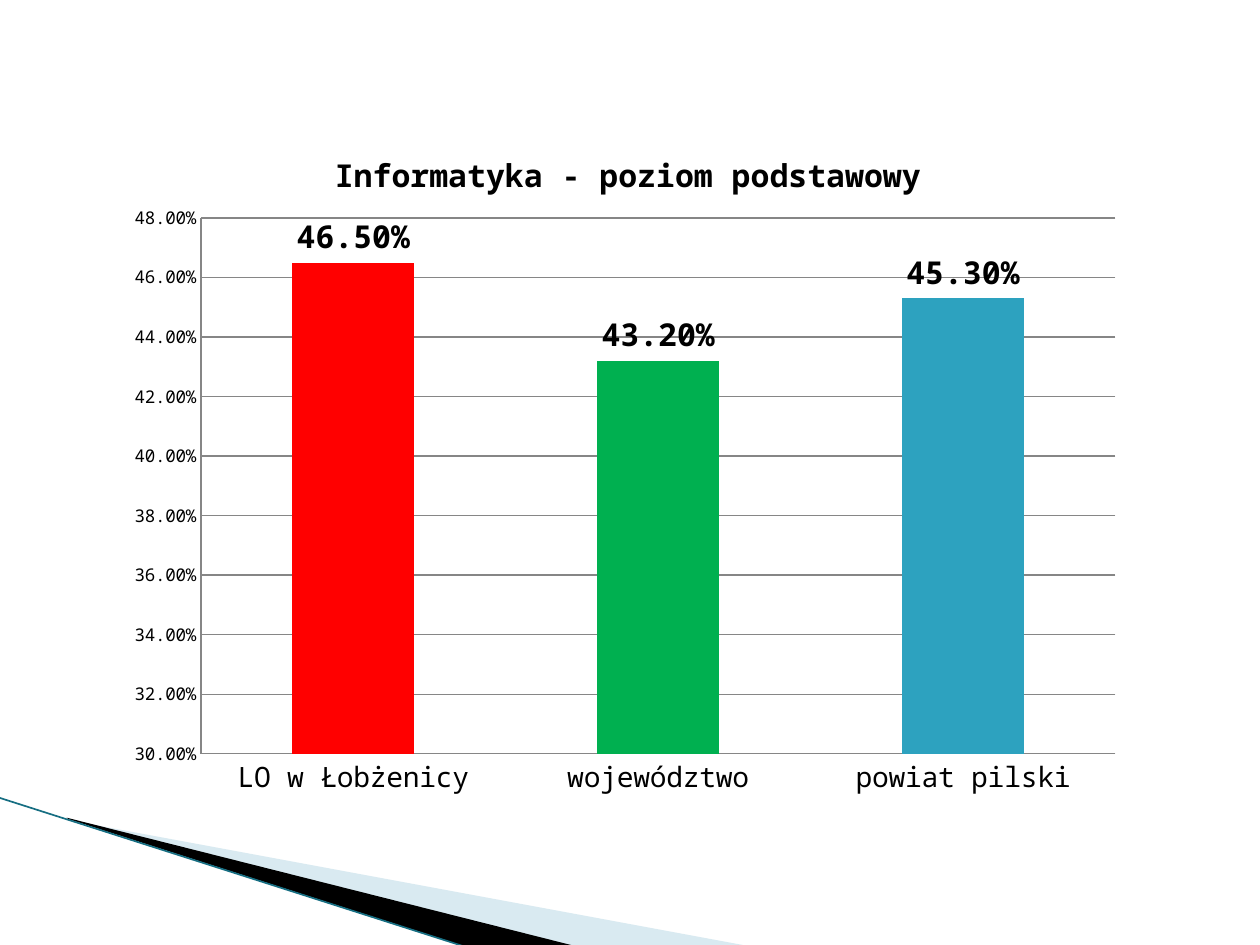
from dataclasses import dataclass

from lxml.etree import SubElement
from pptx import Presentation
from pptx.chart.data import CategoryChartData
from pptx.dml.color import RGBColor
from pptx.enum.chart import XL_CHART_TYPE, XL_LABEL_POSITION, XL_TICK_MARK
from pptx.enum.shapes import MSO_CONNECTOR
from pptx.oxml.ns import qn
from pptx.util import Inches, Pt


@dataclass(frozen=True)
class Theme:
    font: str = "Noto Sans Mono"
    text: RGBColor = RGBColor(0, 0, 0)
    grid: RGBColor = RGBColor(0x86, 0x86, 0x86)
    school: RGBColor = RGBColor(0xFF, 0, 0)
    province: RGBColor = RGBColor(0, 0xB0, 0x50)
    county: RGBColor = RGBColor(0x2D, 0xA2, 0xBF)
    pale_wedge: RGBColor = RGBColor(0xA0, 0xCB, 0xDC)
    edge: RGBColor = RGBColor(0x16, 0x6E, 0x82)
    base_size: Pt = Pt(10)
    category_size: Pt = Pt(16)
    heading_size: Pt = Pt(18)


THEME = Theme()
PERCENT = "0.00%"
RESULTS = [
    ("LO w Łobżenicy", 0.465, THEME.school),
    ("województwo", 0.432, THEME.province),
    ("powiat pilski", 0.453, THEME.county),
]


def add_wedge(slide, points, color, opacity=100):
    corners = [(Inches(x), Inches(y)) for x, y in points]
    builder = slide.shapes.build_freeform(*corners[0])
    builder.add_line_segments(corners[1:], close=True)
    shape = builder.convert_to_shape()
    shape.shadow.inherit = False
    shape.fill.solid()
    shape.fill.fore_color.rgb = color
    shape.line.fill.background()
    if opacity < 100:
        color_element = shape.fill._xPr.find(".//" + qn("a:srgbClr"))
        SubElement(color_element, qn("a:alpha"), val=str(opacity * 1000))


def add_edge(slide, start, end):
    connector = slide.shapes.add_connector(
        MSO_CONNECTOR.STRAIGHT, *map(Inches, start + end))
    connector.line.color.rgb = THEME.edge
    connector.line.width = Pt(0.95)
    SubElement(connector._element.spPr, qn("a:effectLst"))


def set_font(font, size, bold=False):
    font.name = THEME.font
    font.size = size
    font.bold = bold
    font.color.rgb = THEME.text


def set_layout(element, inner=False, **fractions):
    """Place a chart part by fractions of the chart area."""
    layout = element.find(qn("c:layout"))
    if layout is None:
        layout = element.makeelement(qn("c:layout"))
        element.insert(0, layout)
    manual = SubElement(layout, qn("c:manualLayout"))
    if inner:
        SubElement(manual, qn("c:layoutTarget"), val="inner")
    for side in "xy":
        SubElement(manual, qn(f"c:{side}Mode"), val="edge")
    for side, fraction in fractions.items():
        SubElement(manual, qn(f"c:{side}"), val=str(fraction))


def style_axis(axis, size):
    axis.major_tick_mark = XL_TICK_MARK.NONE
    axis.minor_tick_mark = XL_TICK_MARK.NONE
    axis.format.line.color.rgb = THEME.grid
    set_font(axis.tick_labels.font, size)


def add_results_chart(slide):
    data = CategoryChartData(number_format=PERCENT)
    data.categories = [name for name, _, _ in RESULTS]
    data.add_series("Series 1", [value for _, value, _ in RESULTS])
    chart = slide.shapes.add_chart(
        XL_CHART_TYPE.COLUMN_CLUSTERED,
        Inches(0.91), Inches(0.92), Inches(8.11), Inches(5.51), data).chart
    set_font(chart.font, THEME.base_size)
    chart.has_legend = False

    # Title
    title_frame = chart.chart_title.text_frame
    title_frame.text = "Informatyka - poziom podstawowy"
    set_font(title_frame.paragraphs[0].runs[0].font, THEME.heading_size, True)
    set_layout(chart.chart_title._element, x=0.21, y=0.04)

    # Axes and plot area
    style_axis(chart.category_axis, THEME.category_size)
    value_axis = chart.value_axis
    style_axis(value_axis, THEME.base_size)
    value_axis.minimum_scale, value_axis.maximum_scale = 0.3, 0.48
    value_axis.major_unit = 0.02
    value_axis.major_gridlines.format.line.color.rgb = THEME.grid
    value_axis.tick_labels.number_format = PERCENT
    value_axis.tick_labels.number_format_is_linked = False
    set_layout(chart._chartSpace.chart.plotArea, inner=True,
               x=0.0845, y=0.147, w=0.895, h=0.772)

    # Columns and their labels
    plot = chart.plots[0]
    plot.gap_width = 150
    plot.vary_by_categories = False
    series = plot.series[0]
    series.format.fill.solid()
    series.format.fill.fore_color.rgb = THEME.county
    for index, (_, _, color) in enumerate(RESULTS):
        fill = series.points[index].format.fill
        fill.solid()
        fill.fore_color.rgb = color
    labels = series.data_labels
    labels.show_value = True
    labels.position = XL_LABEL_POSITION.OUTSIDE_END
    labels.number_format = PERCENT
    labels.number_format_is_linked = False
    set_font(labels.font, THEME.heading_size, True)


def main():
    presentation = Presentation()
    presentation.slide_width = Inches(10)
    presentation.slide_height = Inches(7.5)
    slide = presentation.slides.add_slide(presentation.slide_layouts[6])

    # Corner decoration
    add_wedge(slide, [(0.55, 6.51), (5.95, 7.51), (4.56, 7.51), (0.55, 6.5)],
              THEME.pale_wedge, opacity=40)
    add_wedge(slide, [(0.53, 6.49), (4.57, 7.51), (3.72, 7.52), (0.54, 6.5)],
              THEME.text)
    add_edge(slide, (-0.01, 6.33), (3.71, 7.52))

    add_results_chart(slide)
    presentation.save("out.pptx")


if __name__ == "__main__":
    main()
